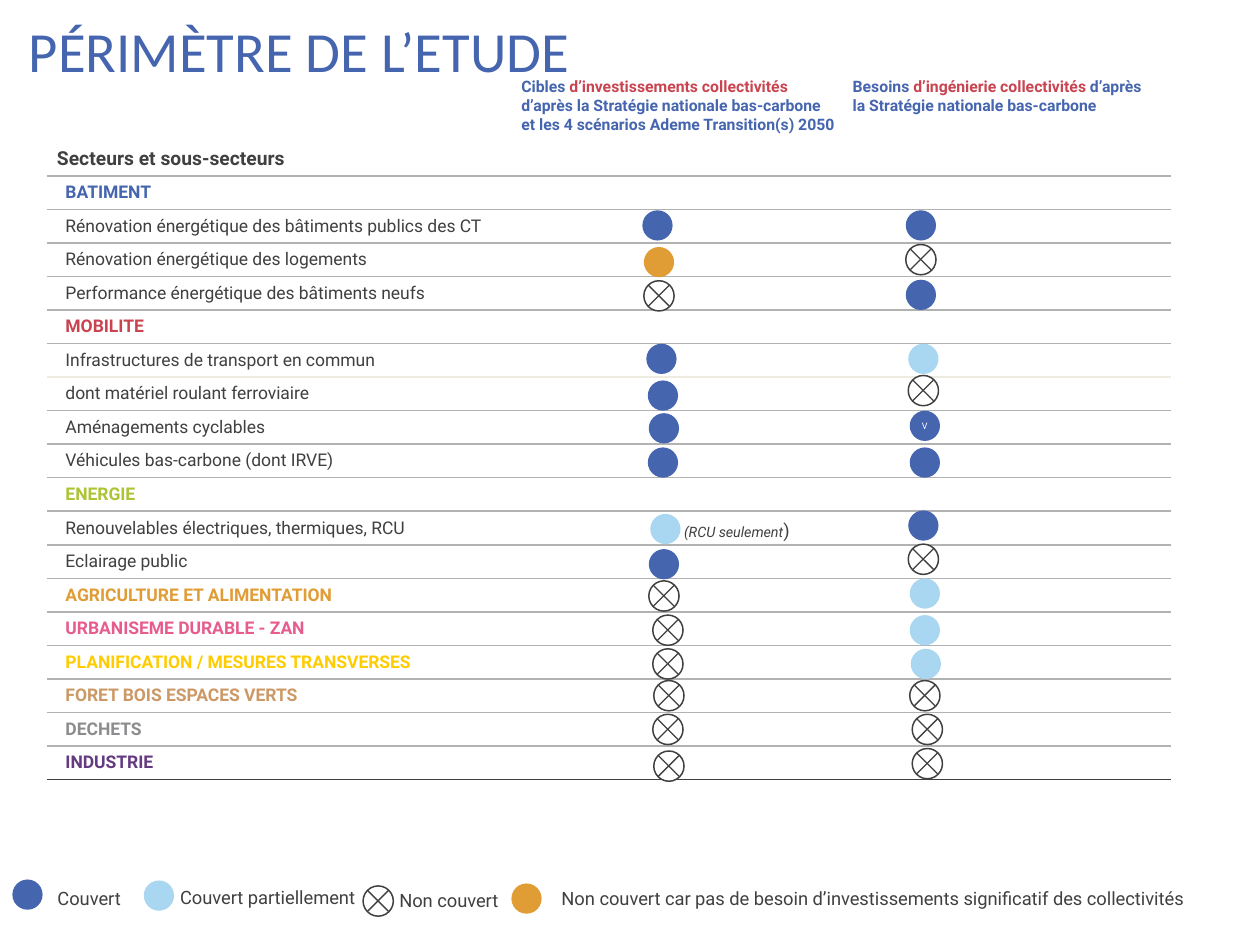
"""Build the study scope slide: a sector table with coverage markers and a legend."""
import lxml.etree
import pptx
import pptx.dml.color
import pptx.enum.shapes
import pptx.enum.text
import pptx.oxml.ns
import pptx.util
from pptx.util import Cm

BLUE, RED, DARK, GREY = "4565AF", "C94450", "404041", "B2B2B3"
LIGHT, ORANGE, WHITE = "A9D7F1", "E09C35", "FFFFFF"
qn = pptx.oxml.ns.qn


def color(code):
    """Turn a hex string into a colour."""
    return pptx.dml.color.RGBColor.from_string(code)


def write(frame, text, size=10.5, ink=DARK, bold=False, italic=False, font="Roboto", align="LEFT"):
    """Append a formatted span to the first paragraph of a frame."""
    para = frame.paragraphs[0]
    para.alignment = pptx.enum.text.PP_ALIGN[align]
    span = para.add_run()
    span.text = text
    span.font.name = font
    span.font.size = pptx.util.Pt(size)
    span.font.bold = bold
    span.font.italic = italic
    span.font.color.rgb = color(ink)


deck = pptx.Presentation()
deck.slide_width, deck.slide_height = Cm(25.4), Cm(19.05)
page = deck.slides.add_slide(deck.slide_layouts[5])

title = page.shapes.title
title.left, title.top, title.width, title.height = Cm(0.33), Cm(0), Cm(24), Cm(2)
title.text_frame.auto_size = pptx.enum.text.MSO_AUTO_SIZE.NONE
title.text_frame.vertical_anchor = pptx.enum.text.MSO_ANCHOR.MIDDLE
write(title.text_frame, "PÉRIMÈTRE DE L’ETUDE", size=32.4, ink=BLUE, font="Calibri")

sectors = [
    ("BATIMENT", BLUE),
    ("Rénovation énergétique des bâtiments publics des CT", DARK),
    ("Rénovation énergétique des logements", DARK),
    ("Performance énergétique des bâtiments neufs", DARK),
    ("MOBILITE", RED),
    ("Infrastructures de transport en commun", DARK),
    ("dont matériel roulant ferroviaire", DARK),
    ("Aménagements cyclables", DARK),
    ("Véhicules bas-carbone (dont IRVE)", DARK),
    ("ENERGIE", "ACC435"),
    ("Renouvelables électriques, thermiques, RCU", DARK),
    ("Eclairage public", DARK),
    ("AGRICULTURE ET ALIMENTATION", ORANGE),
    ("URBANISEME DURABLE - ZAN", "E65C8D"),
    ("PLANIFICATION / MESURES TRANSVERSES", "FFCC00"),
    ("FORET BOIS ESPACES VERTS", "CC9966"),
    ("DECHETS", "8C8C8E"),
    ("INDUSTRIE", "643A81"),
]
row_count = len(sectors) + 1
rules = [GREY] * row_count
rules[6], rules[-1] = "EEECE1", DARK

table = page.shapes.add_table(row_count, 4, Cm(0), Cm(2.87), Cm(23.6), Cm(12.85)).table
table.first_row = table.horz_banding = False
table._tbl.tblPr.find(qn("a:tableStyleId")).text = "{2D5ABB26-0587-4C30-8999-92F81FD0307C}"
for column, width in zip(table.columns, (0.94, 9.91, 7.06, 5.69)):
    column.width = Cm(width)
for row in table.rows:
    row.height = Cm(12.85 / row_count)

for row in range(row_count):
    for column in range(4):
        cell = table.cell(row, column)
        cell.vertical_anchor = pptx.enum.text.MSO_ANCHOR.MIDDLE
        cell.margin_left = cell.margin_right = Cm(0.38)
        cell.margin_top = cell.margin_bottom = Cm(0.1)
        edges = {}
        if column > 0 and row > 0:
            edges["a:lnT"] = rules[row - 1]
        if column > 1 or (column == 1 and row > 0):
            edges["a:lnB"] = rules[row]
        for edge, code in edges.items():
            line = lxml.etree.SubElement(cell._tc.get_or_add_tcPr(), qn(edge), w="12700")
            fill = lxml.etree.SubElement(line, qn("a:solidFill"))
            lxml.etree.SubElement(fill, qn("a:srgbClr"), val=code)
        cell.fill.background()
        if column == 1 and row > 0:
            label, ink = sectors[row - 1]
            write(cell.text_frame, label, size=10, ink=ink, bold=ink != DARK)
        else:
            cell.text_frame.paragraphs[0]._p.get_or_add_endParaRPr().set("sz", "1000")

header = table.cell(0, 0)
header.merge(table.cell(0, 1))
header.margin_left = Cm(1.15)
write(header.text_frame, "Secteurs et sous-secteurs", size=11, bold=True)

headings = [
    (10.26, 6.85, 2.36, "Cibles ", "d’investissements collectivités ",
     "d’après la Stratégie nationale bas-carbone et les 4 scénarios Ademe Transition(s) 2050"),
    (16.94, 6.43, 1.42, "Besoins ", "d’ingénierie collectivités ",
     "d’après la Stratégie nationale bas-carbone"),
]
for left, width, height, *parts in headings:
    box = page.shapes.add_textbox(Cm(left), Cm(1.42), Cm(width), Cm(height))
    box.text_frame.word_wrap = True
    for part, ink in zip(parts, (BLUE, RED, BLUE)):
        write(box.text_frame, part, size=9, ink=ink, bold=True)

legend = [
    (0.91, 17.75, 1.83, "Couvert"),
    (3.38, 17.73, 4.09, "Couvert partiellement"),
    (7.8, 17.81, 2.54, "Non couvert"),
    (11.07, 17.75, 13.13,
     "Non couvert car pas de besoin d’investissements significatif des collectivités"),
]
for left, top, width, label in legend:
    box = page.shapes.add_textbox(Cm(left), Cm(top), Cm(width), Cm(0.71))
    box.text_frame.word_wrap = False
    write(box.text_frame, label)

remark = page.shapes.add_textbox(Cm(13.54), Cm(10.34), Cm(2.82), Cm(0.71))
remark.text_frame.word_wrap = False
write(remark.text_frame, "(RCU seulement", size=8.2, italic=True)
write(remark.text_frame, ")")

markers = {
    BLUE: [(12.95, 4.24), (13.03, 6.93), (13.06, 7.67), (13.08, 8.33), (13.06, 9.02),
           (13.08, 11.07), (18.26, 4.24), (18.26, 5.64), (18.34, 9.02), (18.31, 10.29),
           (0.25, 17.73), (18.34, 8.28)],
    LIGHT: [(13.11, 10.36), (18.31, 6.93), (18.34, 11.66), (18.34, 12.4), (18.36, 13.08),
            (2.9, 17.75)],
    ORANGE: [(12.98, 4.98), (10.31, 17.81)],
    WHITE: [(12.98, 5.66), (13.08, 11.71), (13.16, 12.4), (13.16, 13.08), (13.18, 13.72),
            (13.16, 14.4), (13.18, 15.14), (18.26, 4.93), (18.31, 7.57), (18.31, 10.97),
            (18.34, 13.72), (18.39, 14.4), (18.39, 15.09), (7.32, 17.86)],
}
for code, places in markers.items():
    for left, top in places:
        crossed = code == WHITE
        shapes = page.shapes.add_group_shape().shapes if crossed else page.shapes
        dot = shapes.add_shape(pptx.enum.shapes.MSO_SHAPE.OVAL,
                               Cm(left), Cm(top), Cm(0.61), Cm(0.61))
        dot.shadow.inherit = False
        dot.fill.solid()
        dot.fill.fore_color.rgb = color(code)
        if not crossed:
            dot.line.fill.background()
            if (left, top) == markers[BLUE][-1]:
                dot.text_frame.margin_left = dot.text_frame.margin_right = 0
                write(dot.text_frame, "V", size=5.1, ink=WHITE, align="CENTER")
            continue
        dot.line.color.rgb = color(DARK)
        dot.line.width = pptx.util.Pt(0.85)
        for start, end in ((0.51, 0.09), (0.09, 0.51)):
            stroke = shapes.add_connector(pptx.enum.shapes.MSO_CONNECTOR.STRAIGHT,
                                          Cm(left + 0.09), Cm(top + start),
                                          Cm(left + 0.51), Cm(top + end))
            stroke.line.color.rgb = color(DARK)
            stroke.line.width = pptx.util.Pt(0.75)
            lxml.etree.SubElement(stroke._element.spPr, qn("a:effectLst"))

deck.save("out.pptx")
